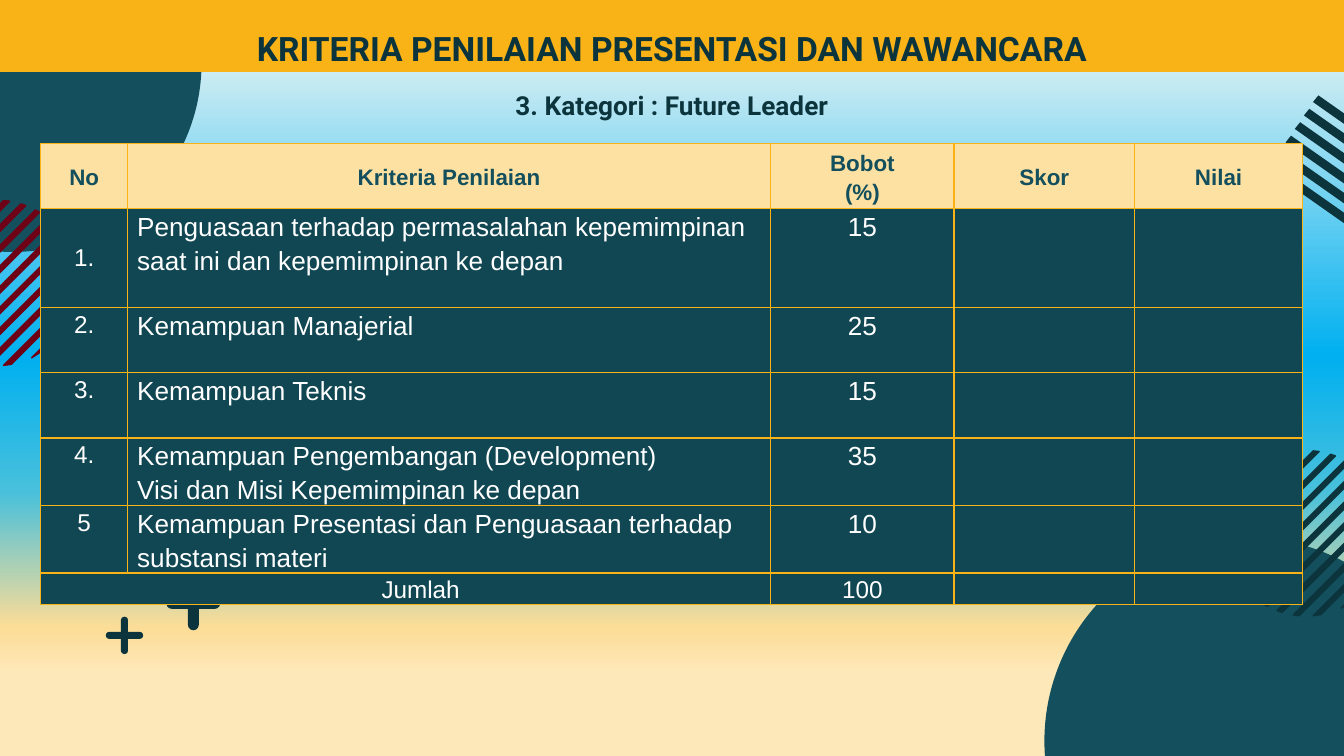
from math import sqrt

from lxml.etree import SubElement
from pptx import Presentation
from pptx.dml.color import RGBColor
from pptx.enum.shapes import MSO_SHAPE as Preset
from pptx.enum.text import MSO_ANCHOR as Anchor, MSO_AUTO_SIZE as AutoSize, PP_ALIGN as Align
from pptx.oxml.ns import qn
from pptx.util import Pt

TEAL, NAVY, CELL, AMBER = "134F5C", "0C343D", "114753", "F9B317"
CREAM, MAROON, WHITE = "FDE1A2", "6F0116", "FFFFFF"


def color(hex_value):
    return RGBColor.from_string(hex_value)


def apply(target, values):
    for name, value in values.items():
        setattr(target, name, value)


class Deck:
    """Holds the style and the current slide."""

    heading_font, table_font = "Roboto", "Arial"

    def __init__(self, width, height):
        self.prs = Presentation()
        apply(self.prs, {"slide_width": Pt(width), "slide_height": Pt(height)})
        self.slide = self.prs.slides.add_slide(self.prs.slide_layouts[5])

    def background(self, stops):
        fill = self.slide.background.fill
        fill.gradient()
        fill.gradient_angle = 270
        stop_list = self.slide.element.find(".//" + qn("a:gsLst"))
        for old_stop in list(stop_list):
            stop_list.remove(old_stop)
        for percent, hex_value in stops:
            stop = SubElement(stop_list, qn("a:gs"), pos=str(percent * 1000))
            SubElement(stop, qn("a:srgbClr"), val=hex_value)

    def paint(self, shape, fill, line=None, weight=0.75):
        shape.shadow.inherit = False
        shape.fill.solid()
        shape.fill.fore_color.rgb = color(fill)
        if line:
            shape.line.color.rgb = color(line)
            shape.line.width = Pt(weight)
        else:
            shape.line.fill.background()

    def preset(self, kind, left, top, width, height, fill):
        shape = self.slide.shapes.add_shape(kind, Pt(left), Pt(top), Pt(width), Pt(height))
        self.paint(shape, fill)
        return shape

    def polygon(self, points, fill, line=None):
        start, *rest = [(Pt(x), Pt(y)) for x, y in points]
        builder = self.slide.shapes.build_freeform(*start)
        builder.add_line_segments(rest, close=True)
        self.paint(builder.convert_to_shape(), fill, line)

    def plus(self, x, y, length, thickness):
        for width, height in ((thickness, length), (length, thickness)):
            bar = self.preset(Preset.ROUNDED_RECTANGLE, x - width / 2, y - height / 2,
                              width, height, NAVY)
            bar.adjustments[0] = 0.5

    def striped_disc(self, x, y, fill, radius=44.3, pitch=7.8, half=1.27):
        """Diagonal bands cut to the outline of a circle."""
        for band in range(-4, 6):
            middle = (band + 0.5) * pitch
            corners = []
            for offset, side in ((middle - half, -1), (middle - half, 1),
                                 (middle + half, 1), (middle + half, -1)):
                along = side * sqrt(radius ** 2 - offset ** 2)
                corners.append((x + (offset + along) / sqrt(2),
                                y + (offset - along) / sqrt(2)))
            self.polygon(corners, fill, fill)

    def fill_text(self, frame, text, font, paragraph_format):
        for index, line in enumerate(text.split("\n")):
            paragraph = frame.paragraphs[0] if index == 0 else frame.add_paragraph()
            apply(paragraph, paragraph_format)
            if line:
                run = paragraph.add_run()
                run.text = line
                apply(run.font, {k: v for k, v in font.items() if k != "hex"})
                run.font.color.rgb = color(font["hex"])
            else:
                SubElement(paragraph._p, qn("a:endParaRPr"), sz="1200")

    def heading_style(self, size):
        return {"name": self.heading_font, "size": Pt(size), "bold": True, "hex": NAVY}

    def title(self, text, left, top, width, height):
        banner = self.slide.shapes.title
        apply(banner, {"left": Pt(left), "top": Pt(top),
                       "width": Pt(width), "height": Pt(height)})
        banner.fill.solid()
        banner.fill.fore_color.rgb = color(AMBER)
        banner.line.color.rgb = color(AMBER)
        banner.line.width = Pt(2)
        apply(banner.text_frame, {"word_wrap": True, "auto_size": AutoSize.NONE,
                                  "vertical_anchor": Anchor.TOP})
        self.fill_text(banner.text_frame, text, self.heading_style(18),
                       {"alignment": Align.CENTER, "line_spacing": 1.5, "space_before": Pt(0)})
        # The banner lies over the corner circle
        banner.element.getparent().append(banner.element)

    def subtitle(self, text, left, top, width, height):
        box = self.slide.shapes.add_textbox(Pt(left), Pt(top), Pt(width), Pt(height))
        apply(box.text_frame, {"word_wrap": True, "vertical_anchor": Anchor.MIDDLE})
        self.fill_text(box.text_frame, text, self.heading_style(14),
                       {"alignment": Align.CENTER})

    def cell(self, cell, text, size, fill, ink, align, bold=False, **layout):
        margins = {"margin_left": Pt(5.1), "margin_right": Pt(5.1),
                   "margin_top": Pt(0), "margin_bottom": Pt(0)}
        apply(cell, {**margins, **layout})
        properties = cell._tc.get_or_add_tcPr()
        for edge in ("a:lnL", "a:lnR", "a:lnT", "a:lnB"):
            border = SubElement(properties, qn(edge), w=str(Pt(1)))
            SubElement(SubElement(border, qn("a:solidFill")), qn("a:srgbClr"), val=AMBER)
        cell.fill.solid()
        cell.fill.fore_color.rgb = color(fill)
        font = {"name": self.table_font, "size": Pt(size), "bold": bold, "hex": ink}
        self.fill_text(cell.text_frame, text, font,
                       {"alignment": align, "line_spacing": 1.15})

    def criteria_table(self, left, top, widths, heights, rows):
        frame = self.slide.shapes.add_table(len(rows), len(widths), Pt(left), Pt(top),
                                            Pt(sum(widths)), Pt(sum(heights)))
        table = frame.table
        apply(table, {"first_row": False, "horz_banding": False})
        for column, width in zip(table.columns, widths):
            column.width = Pt(width)
        for row, height in zip(table.rows, heights):
            row.height = Pt(height)
        total = len(rows) - 1
        table.cell(total, 0).merge(table.cell(total, 1))
        for r, texts in enumerate(rows):
            for c, text in enumerate(texts):
                layout = {}
                if r == 0:
                    style = (12, CREAM, TEAL, Align.CENTER, True)
                    layout["vertical_anchor"] = Anchor.MIDDLE
                else:
                    size = 13 if c == 0 or r == total else 14
                    style = (size, CELL, WHITE, Align.LEFT if c == 1 else Align.CENTER)
                if (r, c) == (1, 0):
                    layout["margin_top"] = Pt(17.2)
                elif (r, c) == (total, 0):
                    layout["margin_left"] = Pt(21)
                self.cell(table.cell(r, c), text, *style, **layout)


def main():
    deck = Deck(720, 405)
    deck.background([(0, "FFFBF3"), (47, "00B0F0"), (65, "48C0DB"),
                     (83, "FCDD97"), (89, "FDE8B9")])

    # Corner circles
    for left, top, diameter in ((559.5, 288, 218), (-94.5, -67.5, 202.5)):
        deck.preset(Preset.OVAL, left, top, diameter, diameter, TEAL)

    # Striped discs and slanted bars at the edges
    deck.striped_disc(699.8, 285.7, NAVY)
    for step in range(6):
        x, y = 706.3 - 4.9 * step, 51.1 + 7.2 * step
        deck.polygon([(x, y), (x + 63.4, y + 44.6), (x + 60.5, y + 48.2),
                      (x - 2.9, y + 3.6)], NAVY)
    deck.striped_disc(-1.8, 151.6, MAROON)

    # Plus signs
    deck.plus(103.6, 323.3, 28.8, 5.8)
    deck.plus(66.7, 340.4, 20, 3.8)

    # Assessment criteria
    criteria = [
        ("1.", "Penguasaan terhadap permasalahan kepemimpinan saat ini dan kepemimpinan ke depan", "15"),
        ("2.", "Kemampuan Manajerial", "25"),
        ("3.", "Kemampuan Teknis", "15"),
        ("4.", "Kemampuan Pengembangan (Development)\nVisi dan Misi Kepemimpinan ke depan", "35"),
        ("5", "Kemampuan Presentasi dan Penguasaan terhadap substansi materi", "10"),
        ("Jumlah", "", "100"),
    ]
    header = ("No", "Kriteria Penilaian", "Bobot\n(%)", "Skor", "Nilai")
    deck.criteria_table(21.8, 76.8, [46.6, 344.5, 98.3, 96.7, 90],
                        [35, 53, 34.8, 35, 36.2, 36.2, 16.9],
                        [header] + [(*entry, "", "") for entry in criteria])

    # Headings
    deck.subtitle("3. Kategori : Future Leader", 0, 44, 720, 24.5)
    deck.title("KRITERIA PENILAIAN PRESENTASI DAN WAWANCARA", 0, 0.7, 720, 36.7)

    deck.prs.save("out.pptx")


if __name__ == "__main__":
    main()
